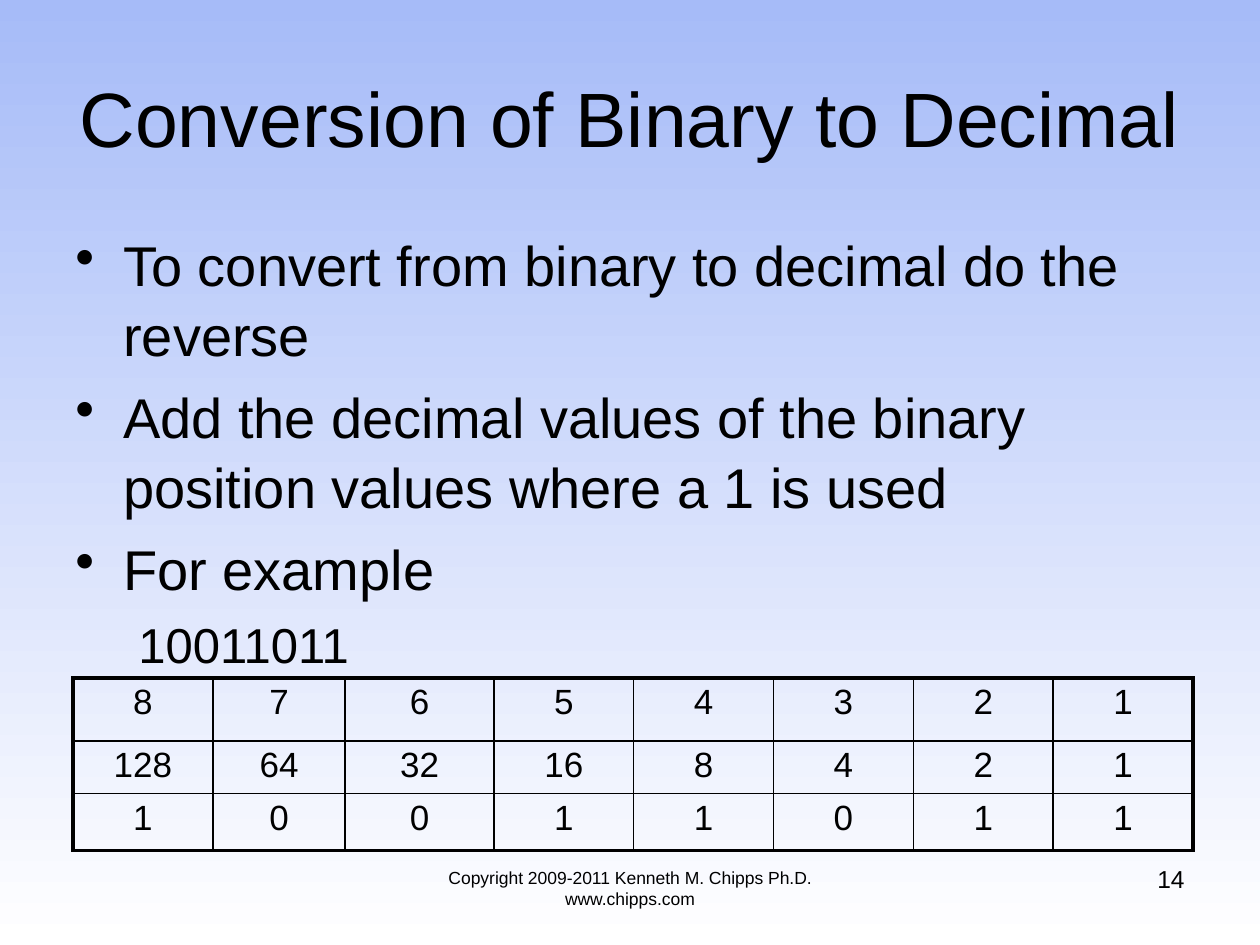
from lxml.etree import SubElement
from pptx import Presentation
from pptx.dml.color import RGBColor
from pptx.enum.text import MSO_ANCHOR, PP_ALIGN
from pptx.oxml.ns import qn
from pptx.util import Inches, Pt

BLACK = RGBColor(0x00, 0x00, 0x00)
SKY = RGBColor(0xA6, 0xBB, 0xF8)
WHITE = RGBColor(0xFF, 0xFF, 0xFF)
THICK, THIN = 2.25, 1

BULLETS = [
    "To convert from binary to decimal do the reverse",
    "Add the decimal values of the binary position values where a 1 is used",
    "For example",
]
BITS = "10011011"
COLUMN_WIDTHS = [1.11, 1.05, 1.18] + [1.11] * 5
ROW_HEIGHTS = [0.5, 0.42, 0.45]


class SlideWriter:
    """Holds the text style and the current page, and adds elements to it."""

    def __init__(self, page, font="Arial", color=BLACK):
        self.page = page
        self.font = font
        self.color = color

    def background(self, top, bottom):
        fill = self.page.background.fill
        fill.gradient()
        fill.gradient_angle = 270
        for stop, color, position in zip(fill.gradient_stops, (top, bottom), (0, 1)):
            stop.color.rgb = color
            stop.position = position

    def span(self, para, text, size):
        span = para.add_run()
        span.text = text
        span.font.name = self.font
        span.font.size = Pt(size)
        span.font.color.rgb = self.color

    def box(self, left, top, width, height, anchor=MSO_ANCHOR.TOP):
        box = self.page.shapes.add_textbox(
            Inches(left), Inches(top), Inches(width), Inches(height))
        frame = box.text_frame
        frame.word_wrap = True
        frame.vertical_anchor = anchor
        return frame

    def label(self, text, size, align, *place, anchor=MSO_ANCHOR.TOP):
        para = self.box(*place, anchor=anchor).paragraphs[0]
        para.alignment = align
        self.span(para, text, size)

    def outline(self, items, *place):
        frame = self.box(*place)
        for index, (text, size, margin, indent, bullet) in enumerate(items):
            para = frame.add_paragraph() if index else frame.paragraphs[0]
            para.space_before = Pt(size * 0.2)
            para.line_spacing = 1.05
            self.span(para, text, size)
            properties = para._p.get_or_add_pPr()
            properties.set("marL", str(Inches(margin)))
            properties.set("indent", str(Inches(indent)))
            if bullet:
                SubElement(properties, qn("a:buChar"), char=bullet)
            else:
                SubElement(properties, qn("a:buNone"))

    def borders(self, cell, widths):
        properties = cell._tc.get_or_add_tcPr()
        for index, (side, width) in enumerate(widths.items()):
            line = SubElement(properties, qn(f"a:{side}"), w=str(Pt(width)))
            fill = SubElement(line, qn("a:solidFill"))
            SubElement(fill, qn("a:srgbClr"), val=str(self.color))
            properties.insert(index, line)

    def table(self, rows, left, top, widths, heights, size):
        frame = self.page.shapes.add_table(
            len(rows), len(widths), Inches(left), Inches(top),
            Inches(sum(widths)), Inches(sum(heights)))
        table = frame.table
        table.first_row = table.horz_banding = False
        for column, width in zip(table.columns, widths):
            column.width = Inches(width)
        for row, height in zip(table.rows, heights):
            row.height = Inches(height)
        last_row, last_column = len(rows) - 1, len(widths) - 1
        for r, values in enumerate(rows):
            for c, value in enumerate(values):
                cell = table.cell(r, c)
                cell.fill.background()
                cell.margin_left = cell.margin_right = Inches(0.08)
                cell.margin_top = cell.margin_bottom = Inches(0.04)
                para = cell.text_frame.paragraphs[0]
                para.alignment = PP_ALIGN.CENTER
                para.space_before = Pt(size * 0.2)
                self.span(para, str(value), size)
                self.borders(cell, {
                    "lnL": THICK if c == 0 else THIN,
                    "lnR": THICK if c == last_column else THIN,
                    "lnT": THICK if r == 0 else THIN,
                    "lnB": THICK if r == last_row else THIN,
                })


def main():
    deck = Presentation()
    deck.slide_width, deck.slide_height = Inches(10), Inches(7.5)
    writer = SlideWriter(deck.slides.add_slide(deck.slide_layouts[6]))
    writer.background(SKY, WHITE)
    writer.label("Conversion of Binary to Decimal", 44, PP_ALIGN.CENTER,
                 0.5, 0.3, 9, 1.25, anchor=MSO_ANCHOR.MIDDLE)
    items = [(text, 32, 0.38, -0.38, "•") for text in BULLETS]
    writer.outline(items + [(BITS, 28, 0.81, -0.31, None)], 0.5, 1.75, 9, 5.08)
    positions = range(len(BITS), 0, -1)
    rows = [positions, [2 ** (position - 1) for position in positions], BITS]
    writer.table(rows, 0.58, 5.38, COLUMN_WIDTHS, ROW_HEIGHTS, 20)
    writer.label("Copyright 2009-2011 Kenneth M. Chipps Ph.D. www.chipps.com", 10,
                 PP_ALIGN.CENTER, 3, 6.83, 4, 0.52)
    writer.label("14", 14, PP_ALIGN.RIGHT, 7.17, 6.81, 2.33, 0.52)
    deck.save("out.pptx")


if __name__ == "__main__":
    main()
